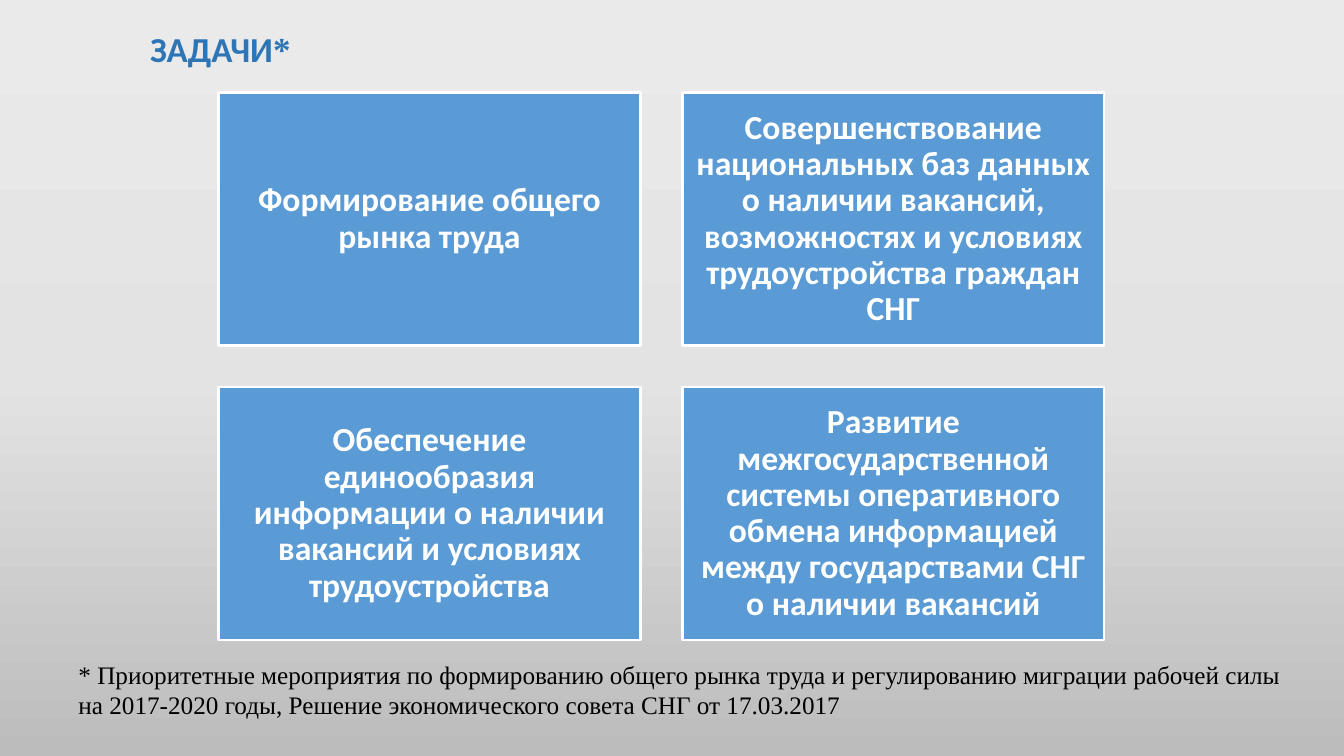
import copy

import pptx
import pptx.dml.color
import pptx.enum.shapes
import pptx.enum.text
import pptx.util

RGBColor = pptx.dml.color.RGBColor
ALIGN = pptx.enum.text.PP_ALIGN
ANCHOR = pptx.enum.text.MSO_ANCHOR

TITLE_BLUE = RGBColor(0x2E, 0x75, 0xB6)
TILE_BLUE = RGBColor(0x5B, 0x9B, 0xD5)
WHITE = RGBColor(0xFF, 0xFF, 0xFF)
BLACK = RGBColor(0x00, 0x00, 0x00)
BACKDROP = [
    (0, RGBColor(0xEB, 0xEA, 0xEA)),
    (0.5, RGBColor(0xE4, 0xE3, 0xE3)),
    (1, RGBColor(0xBD, 0xBC, 0xBC)),
]

TASKS = [
    "Формирование общего рынка труда",
    "Совершенствование национальных баз данных о наличии вакансий, "
    "возможностях и условиях трудоустройства граждан СНГ",
    "Обеспечение единообразия информации о наличии вакансий и условиях трудоустройства",
    "Развитие межгосударственной системы оперативного обмена информацией "
    "между государствами СНГ о наличии вакансий",
]
FOOTNOTE = (
    "* Приоритетные мероприятия по формированию общего рынка труда и регулированию "
    "миграции рабочей силы на 2017-2020 годы, Решение экономического совета СНГ от 17.03.2017"
)


class TaskSlide:
    """Draws styled elements on a slide measured as a grid of 100 columns by 100 rows."""

    sans = "Calibri"
    serif = "Times New Roman"

    def __init__(self, deck):
        self.column = deck.slide_width / 100
        self.row = deck.slide_height / 100
        self.slide = deck.slides.add_slide(deck.slide_layouts[6])

    def place(self, left, top, width, height):
        return (
            round(left * self.column),
            round(top * self.row),
            round(width * self.column),
            round(height * self.row),
        )

    def backdrop(self, stops):
        fill = self.slide.background.fill
        fill.gradient()
        fill.gradient_angle = 270
        stop_list = self.slide.element.xpath(".//a:gsLst")[0]
        stop_list.insert(1, copy.deepcopy(stop_list[0]))
        for stop, (position, color) in zip(fill.gradient_stops, stops):
            stop.position = position
            stop.color.rgb = color

    def style(self, span, font, size, color, bold=False):
        span.font.name = font
        span.font.size = pptx.util.Pt(size)
        span.font.color.rgb = color
        span.font.bold = bold

    def text_box(self, area, anchor=ANCHOR.TOP):
        frame = self.slide.shapes.add_textbox(*self.place(*area)).text_frame
        frame.word_wrap = True
        frame.vertical_anchor = anchor
        return frame.paragraphs[0]

    def title(self, area, word, mark):
        para = self.text_box(area, ANCHOR.MIDDLE)
        for text, font in ((word, self.sans), (mark, self.serif)):
            span = para.add_run()
            span.text = text
            self.style(span, font, 25, TITLE_BLUE, bold=True)

    def tile(self, area, text):
        box = self.slide.shapes.add_shape(
            pptx.enum.shapes.MSO_SHAPE.RECTANGLE, *self.place(*area)
        )
        box.shadow.inherit = False
        box.fill.solid()
        box.fill.fore_color.rgb = TILE_BLUE
        box.line.color.rgb = WHITE
        box.line.width = pptx.util.Pt(2)
        frame = box.text_frame
        frame.word_wrap = True
        frame.vertical_anchor = ANCHOR.MIDDLE
        inset = pptx.util.Inches(0.1)
        frame.margin_left = frame.margin_right = inset
        frame.margin_top = frame.margin_bottom = inset
        frame.text = text
        para = frame.paragraphs[0]
        para.alignment = ALIGN.CENTER
        para.line_spacing = 0.9
        self.style(para.runs[0], self.sans, 24, WHITE, bold=True)

    def tiles(self, left, top, width, height, step_across, step_down, texts):
        for index, text in enumerate(texts):
            down, across = divmod(index, 2)
            area = (left + across * step_across, top + down * step_down, width, height)
            self.tile(area, text)

    def footnote(self, area, text):
        para = self.text_box(area)
        para.text = text
        self.style(para.runs[0], self.serif, 18, BLACK)


def main():
    deck = pptx.Presentation()
    deck.slide_width = pptx.util.Inches(13.33)
    deck.slide_height = pptx.util.Inches(7.5)
    page = TaskSlide(deck)
    page.backdrop(BACKDROP)
    page.title((10.43, 0.13, 73.37, 12.53), "ЗАДАЧИ", "*")
    page.tiles(16.28, 12.27, 31.36, 33.47, 34.51, 38.93, TASKS)
    page.footnote((5.1, 86.53, 92.12, 9.47), FOOTNOTE)
    deck.save("out.pptx")


if __name__ == "__main__":
    main()
